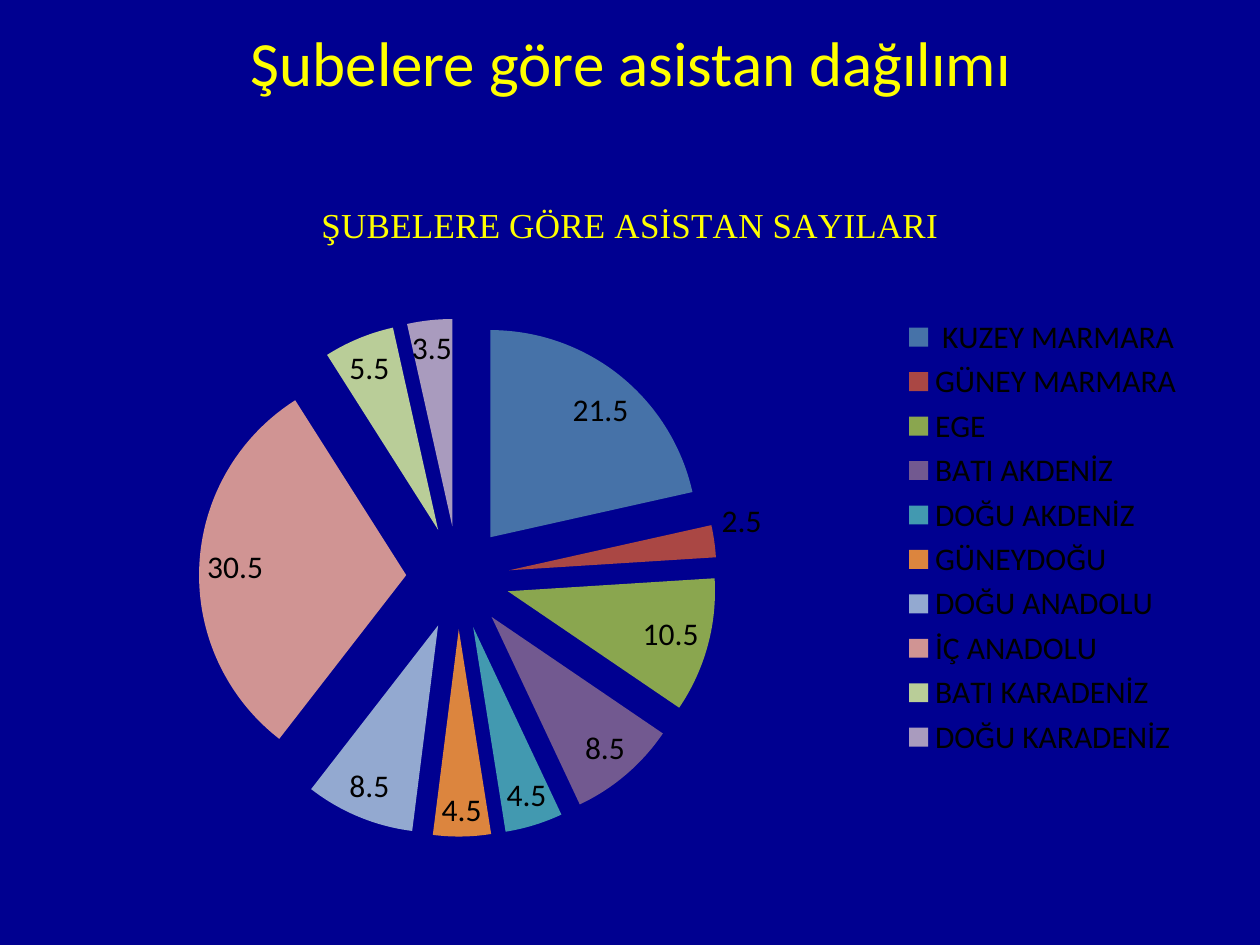
from lxml import etree
from pptx import Presentation
from pptx.chart.data import CategoryChartData
from pptx.dml.color import RGBColor
from pptx.enum.chart import XL_CHART_TYPE as ChartType
from pptx.enum.chart import XL_LABEL_POSITION as LabelPos
from pptx.enum.chart import XL_LEGEND_POSITION as LegendPos
from pptx.enum.text import MSO_ANCHOR, PP_ALIGN
from pptx.oxml.ns import qn
from pptx.util import Pt

BACKGROUND, YELLOW, BLACK = "000090", "FFFF00", "000000"
CHART_TITLE = "ŞUBELERE GÖRE ASİSTAN SAYILARI"
BRANCHES = [
    (" KUZEY MARMARA", 21.5, "4672A8"),
    ("GÜNEY MARMARA", 2.5, "AA4744"),
    ("EGE", 10.5, "8AA64F"),
    ("BATI AKDENİZ", 8.5, "725990"),
    ("DOĞU AKDENİZ", 4.5, "4299B0"),
    ("GÜNEYDOĞU", 4.5, "DC853E"),
    ("DOĞU ANADOLU", 8.5, "93A9D0"),
    ("İÇ ANADOLU", 30.5, "D09493"),
    ("BATI KARADENİZ", 5.5, "B9CD98"),
    ("DOĞU KARADENİZ", 3.5, "A99BBE"),
]


def paint(fill, color):
    fill.solid()
    fill.fore_color.rgb = RGBColor.from_string(color)


def set_font(font, name, size, color):
    for key, value in {"name": name, "size": Pt(size), "bold": False}.items():
        setattr(font, key, value)
    font.color.rgb = RGBColor.from_string(color)


def add_title(slide, text, left, top, width, height):
    tf = slide.shapes.add_textbox(Pt(left), Pt(top), Pt(width), Pt(height)).text_frame
    tf.word_wrap = True
    tf.vertical_anchor = MSO_ANCHOR.MIDDLE
    p = tf.paragraphs[0]
    p.alignment = PP_ALIGN.CENTER
    r = p.add_run()
    r.text = text
    set_font(r.font, "Calibri", 36, YELLOW)


def explode(series, percent):
    """Move all slices out from the centre."""
    el = etree.Element(qn("c:explosion"), val=str(percent))
    series._element.find(qn("c:tx")).addnext(el)


def add_pie(slide, left, top, width, height):
    data = CategoryChartData()
    data.categories = [name for name, _, _ in BRANCHES]
    data.add_series(CHART_TITLE, [value for _, value, _ in BRANCHES])
    chart = slide.shapes.add_chart(
        ChartType.PIE, Pt(left), Pt(top), Pt(width), Pt(height), data).chart
    set_font(chart.font, "Calibri", 18, BLACK)

    chart.has_title = True
    r = chart.chart_title.text_frame.paragraphs[0].add_run()
    r.text = CHART_TITLE
    set_font(r.font, "Times New Roman", 20, YELLOW)

    chart.has_legend = True
    chart.legend.position = LegendPos.RIGHT
    chart.legend.include_in_layout = False

    plot = chart.plots[0]
    plot.vary_by_categories = True
    series = plot.series[0]
    explode(series, 25)
    for i, (_, _, color) in enumerate(BRANCHES):
        paint(series.points[i].format.fill, color)
    labels = series.data_labels
    labels.show_value = True
    labels.position = LabelPos.BEST_FIT
    set_font(labels.font, "Calibri", 18, BLACK)


def main():
    prs = Presentation()
    prs.slide_width, prs.slide_height = Pt(720), Pt(540)
    slide = prs.slides.add_slide(prs.slide_layouts[6])
    paint(slide.background.fill, BACKGROUND)
    add_title(slide, "Şubelere göre asistan dağılımı", 36.5, 9.5, 648, 51)
    add_pie(slide, 36, 100, 648, 414)
    prs.save("out.pptx")


if __name__ == "__main__":
    main()
